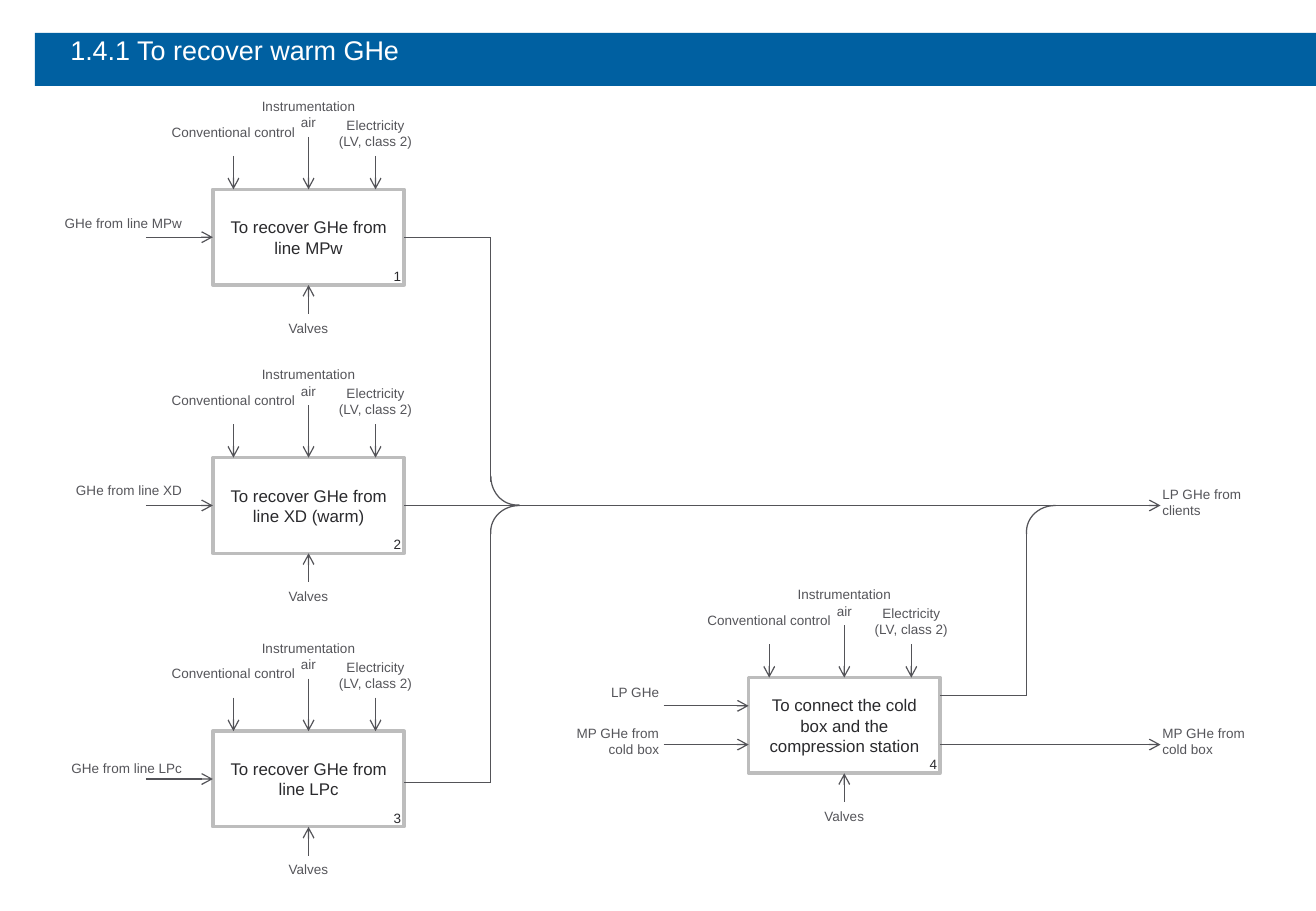
from dataclasses import dataclass

from lxml.etree import SubElement
from pptx import Presentation
from pptx.dml.color import RGBColor as Rgb
from pptx.enum.shapes import MSO_CONNECTOR as Conn, MSO_SHAPE as Shape
from pptx.enum.text import MSO_ANCHOR as Anchor, MSO_AUTO_SIZE as Auto, PP_ALIGN as Align
from pptx.oxml.ns import qn
from pptx.util import Cm, Pt


@dataclass(frozen=True)
class Theme:
    font: str = "Arial"
    blue: str = "0060A1"
    white: str = "FFFFFF"
    edge: str = "BDBDBD"
    dark: str = "2A2A2D"
    label: str = "55555A"
    flow: str = "535358"
    head: int = 16
    body: int = 10
    small: int = 8
    thin: float = 0.75
    thick: int = 2


class Chart:
    def __init__(self, slide, theme):
        self.slide, self.theme = slide, theme
        self.shapes = slide.shapes

    def fill_text(self, frame, text, size, color, align):
        frame.text = text
        for para in frame.paragraphs:
            para.alignment = align
            font = para.font
            font.name, font.size = self.theme.font, Pt(size)
            font.color.rgb = Rgb.from_string(color)

    def title(self, text):
        title = self.shapes.title
        title.left, title.top, title.width, title.height = Cm(1.47), Cm(0.71), Cm(24.77), Cm(0.99)
        frame = title.text_frame
        frame.margin_left = frame.margin_right = frame.margin_top = frame.margin_bottom = 0
        frame.vertical_anchor, frame.auto_size = Anchor.TOP, Auto.NONE
        self.fill_text(frame, text, self.theme.head, self.theme.white, Align.LEFT)
        bar = self.rect(0.73, 0.69, 26.78, 1.11, self.theme.blue)
        title.element.addprevious(bar.element)

    def rect(self, x, y, w, h, fill, edge=None):
        rect = self.shapes.add_shape(Shape.RECTANGLE, Cm(x), Cm(y), Cm(w), Cm(h))
        rect.shadow.inherit = False
        rect.fill.solid()
        rect.fill.fore_color.rgb = Rgb.from_string(fill)
        if edge:
            rect.line.color.rgb = Rgb.from_string(edge)
            rect.line.width = Pt(self.theme.thick)
        else:
            rect.line.fill.background()
        return rect

    def label(self, text, x, y, w, h=0.6, align=Align.CENTER, color=None, wrap=True):
        box = self.shapes.add_textbox(Cm(x), Cm(y), Cm(w), Cm(h))
        box.text_frame.word_wrap = wrap
        self.fill_text(box.text_frame, text, self.theme.small, color or self.theme.label, align)

    def line(self, x1, y1, x2, y2, arrow=False):
        line = self.shapes.add_connector(Conn.STRAIGHT, Cm(x1), Cm(y1), Cm(x2), Cm(y2))
        line.line.color.rgb = Rgb.from_string(self.theme.flow)
        line.line.width = Pt(self.theme.thin)
        props = line.element.spPr
        if arrow:
            SubElement(props.find(qn("a:ln")), qn("a:tailEnd"), type="arrow")
        SubElement(props, qn("a:effectLst"))

    def bend(self, x, y, turn):
        arc = self.shapes.add_shape(Shape.ARC, Cm(x), Cm(y), Cm(1.09), Cm(1.19))
        arc.shadow.inherit = False
        arc.fill.background()
        arc.rotation = turn
        arc.adjustments[0], arc.adjustments[1] = 159.04, 0.9
        arc.line.color.rgb = Rgb.from_string(self.theme.label)
        arc.line.width = Pt(self.theme.thin)

    def step(self, num, text, x, y):
        """A numbered function box with its controls above and means below."""
        theme = self.theme
        box = self.rect(x, y, WIDE, HIGH, theme.white, theme.edge)
        box.text_frame.word_wrap = True
        box.text_frame.vertical_anchor = Anchor.MIDDLE
        self.fill_text(box.text_frame, text, theme.body, theme.dark, Align.CENTER)
        self.label(str(num), x + 3.5, y + 1.52, 0.69, align=Align.RIGHT,
                   color=theme.dark, wrap=False)
        for name, mid, start, end, top, w, h in PORTS:
            self.line(x + mid, y + start, x + mid, y + end, True)
            self.label(name, x + mid - w / 2, y + top, w, h)


# Box size, and the ports of each box: name, centre, arrow start and end, label top, size
WIDE, HIGH = 4, 2
PORTS = [
    ("Conventional control", 0.43, -0.7, 0, -1.5, 3.4, 0.6),
    ("Instrumentation air", 2, -1.1, 0, -2.03, 2.8, 0.94),
    ("Electricity\n(LV, class 2)", 3.4, -0.7, 0, -1.64, 2.4, 0.94),
    ("Valves", 2, 2.6, 2, 2.6, 3.2, 0.6),
]

# Boxes on the left: task, input, box top, input label top
LEFT = 4.45
LINES = [
    ("To recover GHe from line MPw", "GHe from line MPw", 3.96, 4.37),
    ("To recover GHe from line XD (warm)", "GHe from line XD", 9.57, 9.96),
    ("To recover GHe from line LPc", "GHe from line LPc", 15.29, 15.77),
]
MAIN, JOIN, RISE, END = 10.57, 10.26, 21.46, 24.26


def main():
    deck = Presentation()
    deck.slide_width, deck.slide_height = Cm(27.51), Cm(19.05)
    chart = Chart(deck.slides.add_slide(deck.slide_layouts[5]), Theme())
    chart.title("1.4.1 To recover warm GHe")

    # Recovery boxes with their inputs
    for num, (task, name, y, top) in enumerate(LINES, 1):
        chart.step(num, task, LEFT, y)
        chart.line(3.05, y + HIGH / 2, LEFT, y + HIGH / 2, True)
        chart.label(name, 1.06, top, 3, align=Align.RIGHT)

    # Upper and lower outputs join the main line
    for y in (4.96, 16.36):
        chart.line(LEFT + WIDE, y, JOIN, y)
    chart.line(JOIN, 4.96, JOIN, 16.36)
    chart.rect(9.96, 10.08, 0.79, 0.97, chart.theme.white)
    chart.line(LEFT + WIDE, MAIN, END, MAIN, True)
    chart.bend(JOIN, 9.37, 180)
    chart.bend(10.31, 10.52, 270)

    # Compression station box
    x, y = 15.65, 14.17
    chart.step(4, "To connect the cold box and the compression station", x, y)
    for name, top, w, h, flow in [("LP GHe", 14.17, 2.2, 0.6, 14.76),
                                  ("MP GHe from cold box", 15.04, 2.4, 0.94, 15.57)]:
        chart.line(13.87, flow, x, flow, True)
        chart.label(name, 14.03 - w, top, w, h, Align.RIGHT)
    chart.line(x + WIDE, 14.55, RISE, 14.55)
    chart.line(RISE, 11.15, RISE, 14.55)
    chart.bend(21.51, 10.52, 270)
    chart.line(x + WIDE, 15.57, END, 15.57, True)

    # Outputs on the right
    for name, top, w in [("LP GHe from clients", 10.03, 2.2),
                         ("MP GHe from cold box", 15.04, 2.4)]:
        chart.label(name, 24.05, top, w, 0.94, Align.LEFT)

    deck.save("out.pptx")


if __name__ == "__main__":
    main()
